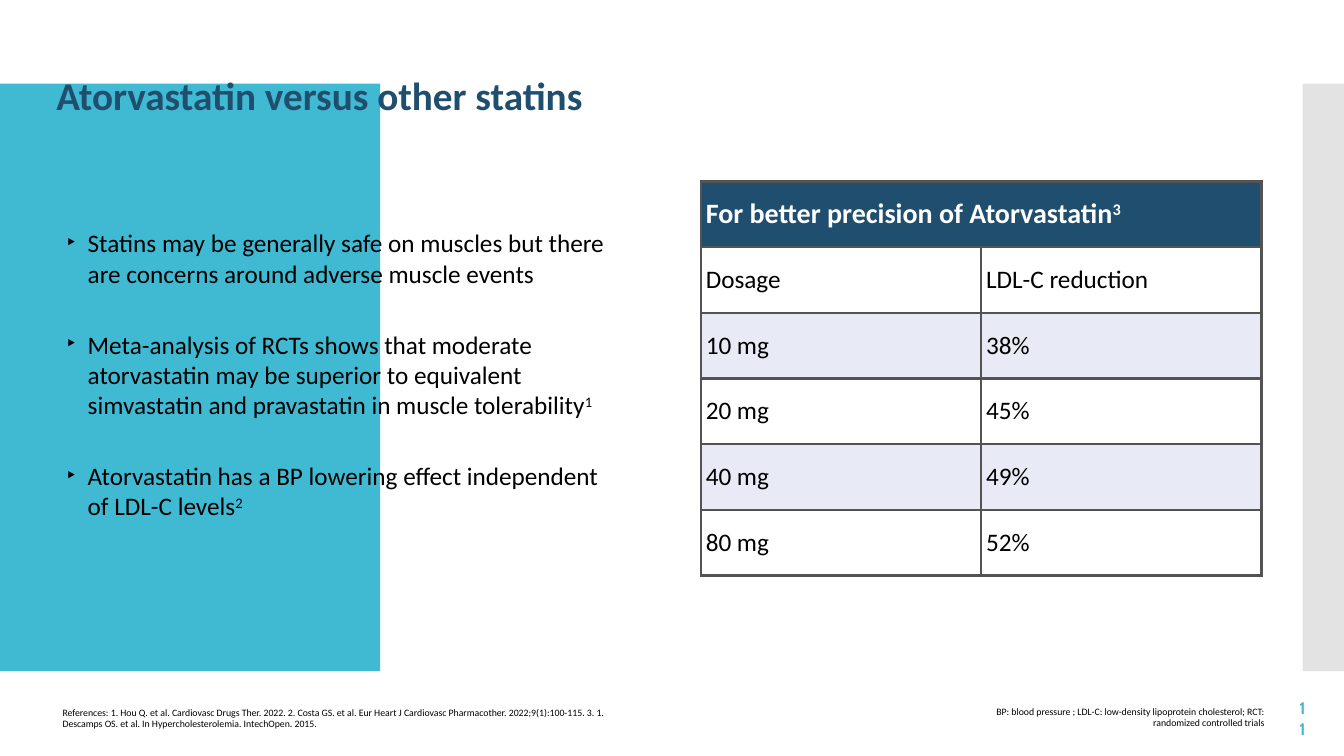
"""Build the slide comparing atorvastatin with other statins."""
from lxml import etree
from pptx import Presentation
from pptx.dml.color import RGBColor
from pptx.enum.shapes import MSO_SHAPE
from pptx.enum.text import MSO_ANCHOR, MSO_AUTO_SIZE, PP_ALIGN
from pptx.oxml import parse_xml
from pptx.oxml.ns import nsdecls, qn
from pptx.util import Pt

RECT = MSO_SHAPE.RECTANGLE
MID, TOP = MSO_ANCHOR.MIDDLE, MSO_ANCHOR.TOP
LEFT, RIGHT = PP_ALIGN.LEFT, PP_ALIGN.RIGHT
FIXED = MSO_AUTO_SIZE.NONE
PX = 9144
HUES = {
    "teal": "40BAD2", "grey": "C8C8C8", "navy": "204E6E", "black": "000000",
    "white": "FFFFFF", "pale": "E8EBF5", "line": "535353",
}


def write(para, parts, size, hue="black", bold=False, face="Calibri"):
    """Add runs to a paragraph, raising every second one."""
    for i, part in enumerate(parts):
        run = para.add_run()
        run.text = part
        font = run.font
        font.name, font.size, font.bold = face, Pt(size), bold
        font.color.rgb = RGBColor.from_string(HUES[hue])
        if i % 2:
            run._r.get_or_add_rPr().set("baseline", "30000")


def setup(shape, box, anchor=MID, inset=5):
    """Place a text shape and return its frame."""
    shape.left, shape.top, shape.width, shape.height = [n * PX for n in box]
    frame = shape.text_frame
    frame.word_wrap, frame.auto_size = True, FIXED
    frame.vertical_anchor = anchor
    frame.margin_left = frame.margin_right = inset * PX
    frame.margin_top = frame.margin_bottom = 5 * PX
    return frame


deck = Presentation()
deck.slide_width, deck.slide_height = 1333 * PX, 750 * PX
slide = deck.slides.add_slide(deck.slide_layouts[1])
shapes = slide.shapes
title, body = shapes.title, slide.placeholders[1]

for left, width, hue, alpha in [(0, 377, "teal", 100), (1292, 41, "grey", 50)]:
    panel = shapes.add_shape(RECT, left * PX, 83 * PX, width * PX, 583 * PX)
    panel.shadow.inherit = False
    panel.line.fill.background()
    panel.fill.solid()
    panel.fill.fore_color.rgb = RGBColor.from_string(HUES[hue])
    if alpha < 100:
        tint = next(panel.element.iter(qn("a:srgbClr")))
        etree.SubElement(tint, qn("a:alpha")).set("val", str(alpha * 1000))
    title.element.addprevious(panel.element)

head = setup(title, (51, 70, 1099, 49)).paragraphs[0]
head.alignment = LEFT
write(head, ["Atorvastatin versus other statins"], 28, "navy", True)

points = [
    ["Statins may be generally safe on muscles but there are concerns "
     "around adverse muscle events"],
    ["Meta-analysis of RCTs shows that moderate atorvastatin may be superior "
     "to equivalent simvastatin and pravastatin in muscle tolerability", "1"],
    ["Atorvastatin has a BP lowering effect independent of LDL-C levels", "2"],
]
frame = setup(body, (61, 221, 549, 309), TOP)
for i, parts in enumerate(points):
    para = frame.add_paragraph() if i else frame.paragraphs[0]
    props = para._p.get_or_add_pPr()
    props.set("marL", str(21 * PX))
    props.set("indent", str(-21 * PX))
    etree.SubElement(props, qn("a:buChar")).set("char", "‣")
    para.space_before = Pt(29 if i else 0)
    write(para, parts, 18)

notes = [
    ((57, 696, 549, 33), LEFT,
     "References: 1. Hou Q. et al. Cardiovasc Drugs Ther. 2022. 2. Costa GS. "
     "et al. Eur Heart J Cardiovasc Pharmacother. 2022;9(1):100-115. 3. 1. "
     "Descamps OS. et al. In Hypercholesterolemia. IntechOpen. 2015."),
    ((947, 695, 312, 33), RIGHT,
     "BP: blood pressure ; LDL-C: low-density lipoprotein cholesterol; RCT: "
     "randomized controlled trials"),
]
for box, align, text in notes:
    para = setup(shapes.add_textbox(0, 0, 0, 0), box).paragraphs[0]
    para.alignment = align
    write(para, [text], 7)

page = setup(shapes.add_textbox(0, 0, 0, 0), (1279, 698, 25, 29), MID, 10)
page.paragraphs[0].alignment = RIGHT
write(page.paragraphs[0], ["11"], 12, "teal", True, "Cabin")

rows = [
    [["For better precision of Atorvastatin", "3"], []],
    [["Dosage"], ["LDL-C reduction"]],
    [["10 mg"], ["38%"]],
    [["20 mg"], ["45%"]],
    [["40 mg"], ["49%"]],
    [["80 mg"], ["52%"]],
]
grid = shapes.add_table(6, 2, 695 * PX, 180 * PX, 556 * PX, 391 * PX).table
grid.cell(0, 0).merge(grid.cell(0, 1))
for r, row in enumerate(rows):
    fill = "pale" if r % 2 == 0 else "white"
    for c, parts in enumerate(row):
        cell = grid.cell(r, c)
        cell.vertical_anchor = MID
        cell.margin_left = cell.margin_right = 5 * PX
        cell.margin_top = cell.margin_bottom = 5 * PX
        cell.fill.solid()
        cell.fill.fore_color.rgb = RGBColor.from_string(
            HUES[fill if r else "navy"])
        for i, side in enumerate(["lnL", "lnR", "lnT", "lnB"]):
            edge = parse_xml(
                f'<a:{side} {nsdecls("a")} w="{Pt(2)}"><a:solidFill>'
                f'<a:srgbClr val="{HUES["line"]}"/></a:solidFill></a:{side}>')
            cell._tc.get_or_add_tcPr().insert(i, edge)
        para = cell.text_frame.paragraphs[0]
        if r:
            write(para, parts, 18)
        else:
            write(para, parts, 20, "white", True)

deck.save("out.pptx")
